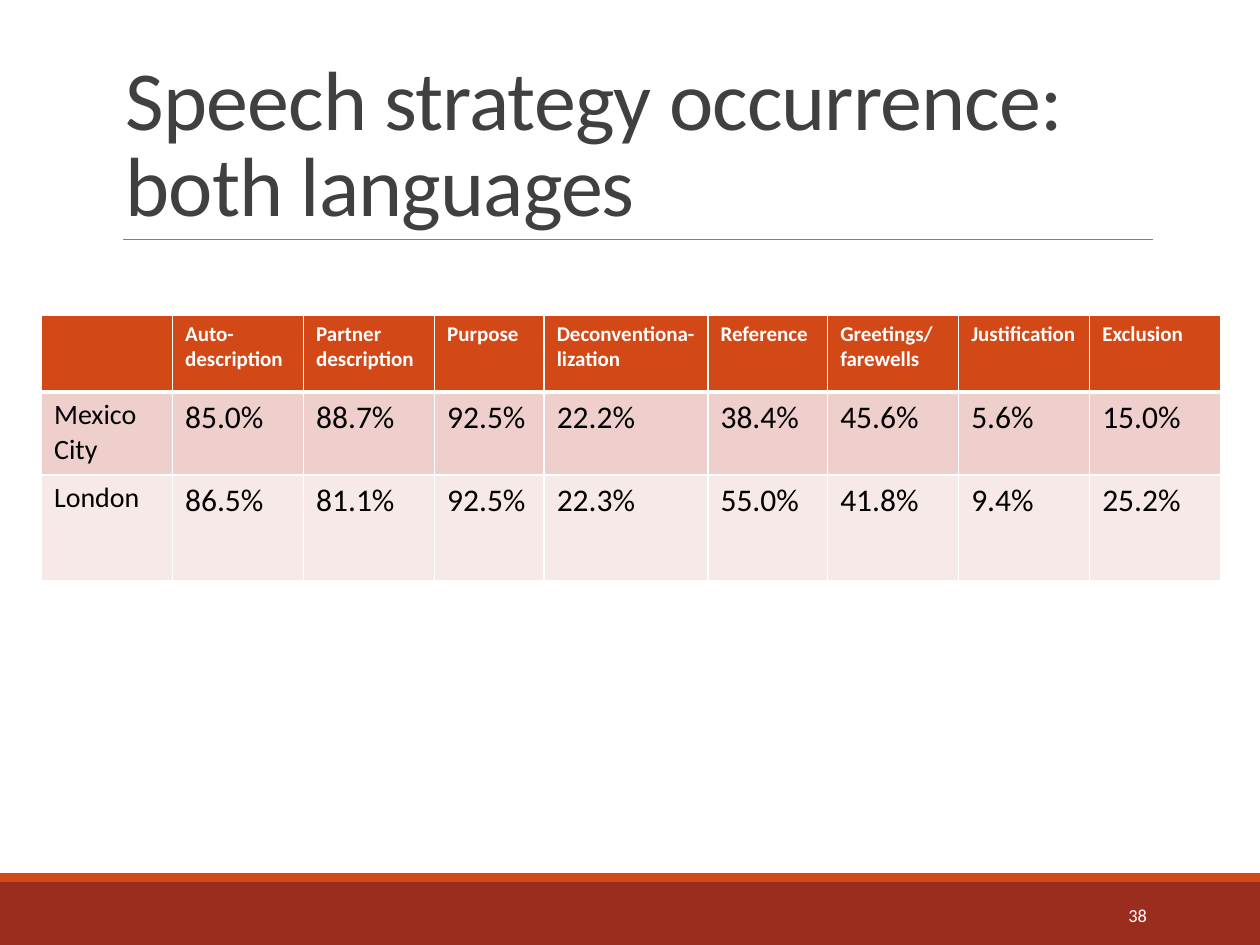
from lxml.etree import SubElement
from pptx import Presentation
from pptx.dml.color import RGBColor
from pptx.enum.shapes import MSO_CONNECTOR, MSO_SHAPE
from pptx.enum.text import MSO_ANCHOR as Anchor, PP_ALIGN as Align
from pptx.oxml.ns import qn
from pptx.util import Inches, Pt

WHITE = RGBColor(0xFF, 0xFF, 0xFF)
BLACK = RGBColor(0, 0, 0)
DARK_GRAY = RGBColor(0x40, 0x40, 0x40)
RULE_GRAY = RGBColor(0x80, 0x80, 0x80)
ORANGE = RGBColor(0xD3, 0x48, 0x17)
BRICK = RGBColor(0x9B, 0x2D, 0x1F)
ROSE = RGBColor(0xEF, 0xCF, 0xCC)
PALE_ROSE = RGBColor(0xF7, 0xE9, 0xE8)

STRATEGIES = ["", "Auto-description", "Partner description", "Purpose",
              "Deconventiona-lization", "Reference", "Greetings/ farewells",
              "Justification", "Exclusion"]
MEXICO_CITY = ["Mexico City", "85.0%", "88.7%", "92.5%", "22.2%", "38.4%",
               "45.6%", "5.6%", "15.0%"]
LONDON = ["London", "86.5%", "81.1%", "92.5%", "22.3%", "55.0%", "41.8%",
          "9.4%", "25.2%"]
COLUMN_WIDTHS = [1.04, 1.04, 1.04, 0.87, 1.3, 0.95, 1.04, 1.04, 1.04]
ROW_HEIGHTS = [0.61, 0.66, 0.84]


def add_run(paragraph, text, size, color, bold=False):
    run = paragraph.add_run()
    run.text = text
    run.font.name = "Calibri"
    run.font.size = Pt(size)
    run.font.bold = bold
    run.font.color.rgb = color
    return run


def add_text(slide, box, text, size, color, anchor, align=Align.LEFT):
    frame = slide.shapes.add_textbox(*map(Inches, box)).text_frame
    frame.word_wrap = True
    frame.vertical_anchor = anchor
    paragraph = frame.paragraphs[0]
    paragraph.alignment = align
    return paragraph, add_run(paragraph, text, size, color)


def add_band(slide, box, color):
    band = slide.shapes.add_shape(MSO_SHAPE.RECTANGLE, *map(Inches, box))
    band.shadow.inherit = False
    band.fill.solid()
    band.fill.fore_color.rgb = color
    band.line.fill.background()


def add_title(slide, box):
    left, top, width, height = box
    # Rule along the bottom of the title
    bottom = Inches(top + height)
    rule = slide.shapes.add_connector(
        MSO_CONNECTOR.STRAIGHT, Inches(left + 0.08), bottom,
        Inches(left + width), bottom)
    rule.line.color.rgb = RULE_GRAY
    rule.line.width = Pt(0.5)
    SubElement(rule._element.spPr, qn("a:effectLst"))

    paragraph, run = add_text(
        slide, box, "Speech strategy occurrence: both languages", 48,
        DARK_GRAY, Anchor.BOTTOM)
    paragraph.line_spacing = 0.85
    run.font._element.set("spc", "-50")


def set_borders(cell, bottom_width):
    properties = cell._tc.get_or_add_tcPr()
    for side, width in (("L", 1), ("R", 1), ("T", 1), ("B", bottom_width)):
        line = SubElement(properties, qn(f"a:ln{side}"), w=str(Pt(width)))
        fill = SubElement(line, qn("a:solidFill"))
        SubElement(fill, qn("a:srgbClr"), val=str(WHITE))


def add_occurrence_table(slide, box):
    rows = [(STRATEGIES, ORANGE), (MEXICO_CITY, ROSE), (LONDON, PALE_ROSE)]
    table = slide.shapes.add_table(
        len(rows), len(STRATEGIES), *map(Inches, box)).table
    for column, width in zip(table.columns, COLUMN_WIDTHS):
        column.width = Inches(width)
    for row, height in zip(table.rows, ROW_HEIGHTS):
        row.height = Inches(height)

    for r, (texts, color) in enumerate(rows):
        header = r == 0
        for c, text in enumerate(texts):
            cell = table.cell(r, c)
            # A thicker line parts the header from the cities
            set_borders(cell, 3 if header else 1)
            if r == 1:
                cell._tc.tcPr.find(qn("a:lnT")).set("w", str(Pt(3)))
            cell.fill.solid()
            cell.fill.fore_color.rgb = color
            if text:
                size = 12 if header else 16 if c == 0 else 18
                add_run(cell.text_frame.paragraphs[0], text, size,
                        WHITE if header else BLACK, bold=header)


def add_footer(slide, box):
    left, top, width, height = box
    stripe = 0.07
    add_band(slide, (left, top + stripe, width, height - stripe), BRICK)
    add_band(slide, (left, top, width, stripe), ORANGE)
    # Slide number
    add_text(slide, (left + 8.12, top + 0.13, 1.08, 0.4), "38", 10.5, WHITE,
             Anchor.MIDDLE, Align.RIGHT)


def main():
    deck = Presentation()
    deck.slide_width, deck.slide_height = Inches(10), Inches(7.5)
    slide = deck.slides.add_slide(deck.slide_layouts[6])
    add_footer(slide, (0, 6.93, 10, 0.57))
    add_title(slide, (0.9, 0.31, 8.25, 1.59))
    add_occurrence_table(slide, (0.33, 2.5, 9.33, 2.11))
    deck.save("out.pptx")


if __name__ == "__main__":
    main()
